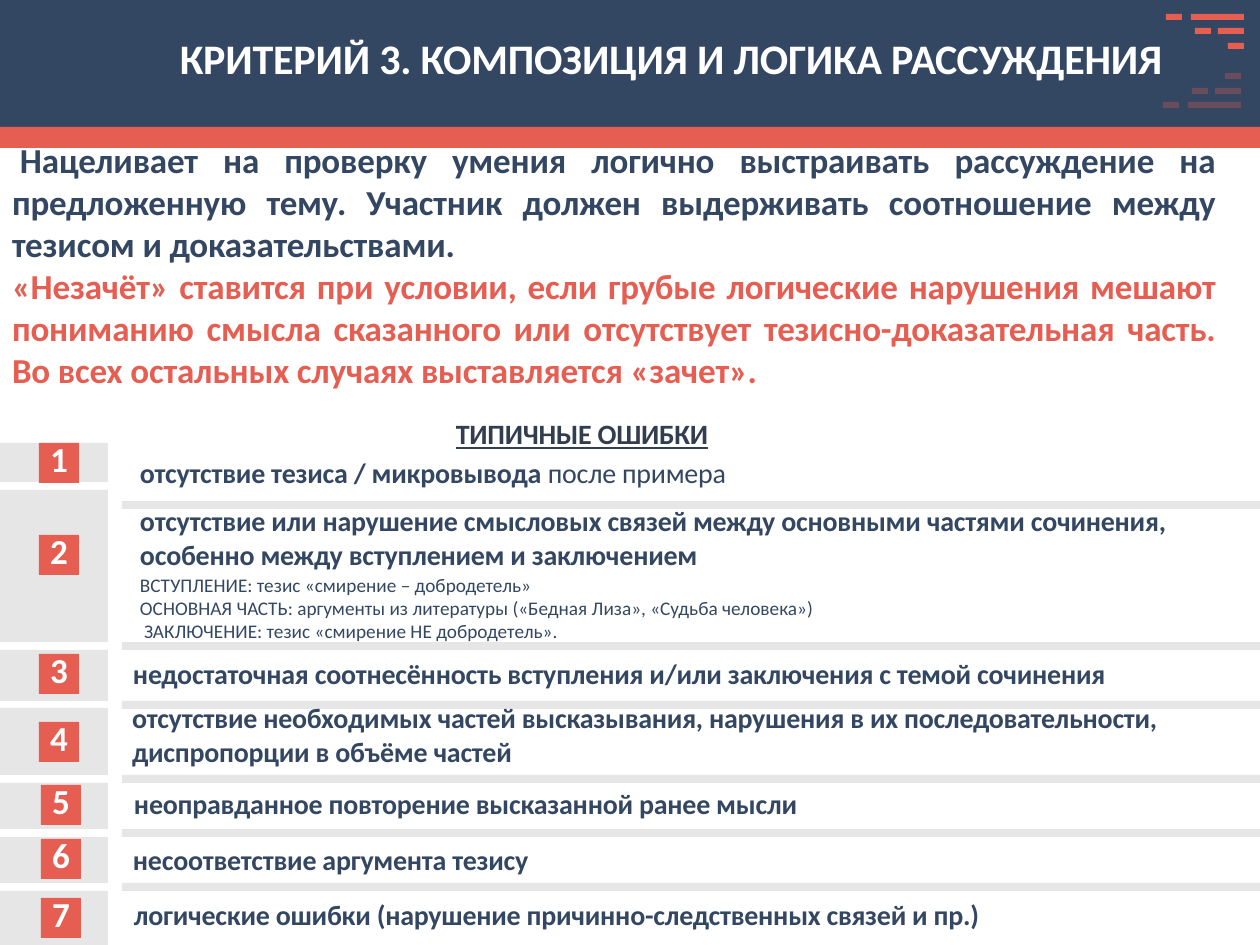
from dataclasses import dataclass

from pptx import Presentation
from pptx import util as u
from pptx.dml.color import RGBColor
from pptx.enum import shapes, text
from pptx.oxml import ns, xmlchemy

PX = 914400 / 126  # EMU in one px


def px(n):
    return u.Emu(round(n * PX))


@dataclass(frozen=True)
class Theme:
    font: str = "Calibri"
    navy: str = "344762"
    dark: str = "333D50"
    coral: str = "E65E52"
    gray: str = "E6E6E6"
    white: str = "FFFFFF"
    title: float = 24
    lead: float = 20
    item: float = 16
    note: float = 11
    tracking: int = -10  # hundredths of a point


def add_run(p, words, *, font, size, color, bold=True, underline=False, tracking=0):
    r = p.add_run()
    r.text = words
    r.font.name, r.font.size = font, u.Pt(size)
    r.font.bold = bold
    if underline:
        r.font.underline = True
    r.font.color.rgb = RGBColor.from_string(color)
    if tracking:
        r._r.get_or_add_rPr().set("spc", str(tracking))


class Deck:
    def __init__(self, theme, width, height):
        self.theme = theme
        self.prs = Presentation()
        self.prs.slide_width, self.prs.slide_height = px(width), px(height)
        self.s = self.prs.slides.add_slide(self.prs.slide_layouts[6])

    def paint(self, sp, color, alpha=None):
        sp.shadow.inherit = False
        sp.fill.solid()
        sp.fill.fore_color.rgb = RGBColor.from_string(color)
        sp.line.fill.background()
        if alpha is not None:
            clr = sp._element.spPr.find(".//" + ns.qn("a:srgbClr"))
            xmlchemy.OxmlElement("a:alpha")
            node = xmlchemy.OxmlElement("a:alpha")
            node.set("val", str(alpha * 1000))
            clr.append(node)

    def rect(self, x, y, w, h, color):
        sp = self.s.shapes.add_shape(
            shapes.MSO_SHAPE.RECTANGLE, px(x), px(y), px(w), px(h))
        self.paint(sp, color)
        return sp

    def dashes(self, boxes, color, alpha=None):
        """One outline made of many (x, y, w, h) bars."""
        x, y = boxes[0][:2]
        fb = self.s.shapes.build_freeform(x, y, scale=PX)
        for x, y, w, h in boxes:
            fb.move_to(x, y)
            fb.add_line_segments([(x + w, y), (x + w, y + h), (x, y + h)], close=True)
        self.paint(fb.convert_to_shape(), color, alpha)

    def frame(self, sp, left=0, top=0, right=0):
        tf = sp.text_frame
        tf.word_wrap = True
        tf.vertical_anchor = text.MSO_ANCHOR.TOP
        tf.margin_left, tf.margin_top = px(left), px(top)
        tf.margin_right, tf.margin_bottom = px(right), 0
        return tf

    def fill_text(self, tf, paragraphs):
        """Each paragraph is a dict: runs, and optional align, before, indent, first, line."""
        for i, para in enumerate(paragraphs):
            p = tf.paragraphs[0] if i == 0 else tf.add_paragraph()
            p.alignment = para.get("align", text.PP_ALIGN.LEFT)
            p.space_before = u.Pt(para.get("before", 0))
            if "line" in para:
                p.line_spacing = u.Pt(para["line"])
            pPr = p._p.get_or_add_pPr()
            pPr.set("marL", str(px(para.get("indent", 0))))
            pPr.set("indent", str(px(para.get("first", 0))))
            for words, style in para["runs"]:
                add_run(p, words, font=self.theme.font, **style)

    def textbox(self, x, y, w, h, paragraphs, **margins):
        sp = self.s.shapes.add_textbox(px(x), px(y), px(w), px(h))
        self.fill_text(self.frame(sp, **margins), paragraphs)

    def badge(self, x, y, number):
        t = self.theme
        sp = self.rect(x, y, 40, 40, t.coral)
        style = dict(size=t.lead, color=t.white)
        self.fill_text(self.frame(sp), [dict(
            runs=[(str(number), style)], align=text.PP_ALIGN.CENTER, line=20.8)])


def main():
    t = Theme()
    d = Deck(t, 1260, 945)
    center, justify = text.PP_ALIGN.CENTER, text.PP_ALIGN.JUSTIFY

    # Text styles
    title = dict(size=t.title, color=t.white, tracking=t.tracking)
    lead = dict(size=t.lead, color=t.navy, tracking=t.tracking)
    warning = dict(lead, color=t.coral)
    item = dict(size=t.item, color=t.navy, tracking=t.tracking)
    heading = dict(item, color=t.dark, underline=True)
    plain = dict(item, bold=False)
    note = dict(plain, size=t.note, tracking=0)

    # Header band with title
    d.rect(0, 0, 1260, 127, t.navy)
    d.textbox(0, 0, 1260, 127, [dict(
        runs=[("КРИТЕРИЙ 3. КОМПОЗИЦИЯ И ЛОГИКА РАССУЖДЕНИЯ", title)],
        align=center)], left=82, top=33)

    # Dash ornaments: the lower one mirrors the upper one
    bars = [(1166, 0, 16), (1191, 0, 53), (1195, 1, 16), (1218, 1, 26), (1228, 2, 16)]
    for rows, shift, alpha in (((14, 28, 43), 0, None), ((102, 88, 73), -3, 30)):
        d.dashes([(x + shift, rows[row], w, 6) for x, row, w in bars], t.coral, alpha)
    d.rect(0, 127, 1260, 21, t.coral)

    # Lead text
    d.textbox(11, 137, 1216, 256, [
        dict(runs=[("Нацеливает на проверку умения логично выстраивать рассуждение на "
                    "предложенную тему. Участник должен выдерживать соотношение между "
                    "тезисом и доказательствами.", lead)], align=justify, first=8),
        dict(runs=[("«Незачёт» ставится при условии, если грубые логические нарушения "
                    "мешают пониманию смысла сказанного или отсутствует "
                    "тезисно-доказательная часть. Во всех остальных случаях "
                    "выставляется «зачет».", warning)], align=justify),
    ], left=1, top=1, right=12)

    # Error rows: band top, bottom; badge x, y; text x, y, width; paragraphs
    def line(words, style=item, **fmt):
        return dict(runs=[(words, style)], **fmt)

    rows = [
        (443, 482, 39, 443, 139, 416, 606, [
            line("ТИПИЧНЫЕ ОШИБКИ", heading, indent=316),
            dict(runs=[("отсутствие тезиса / микровывода ", item),
                       ("после примера", plain)], before=3)]),
        (490, 642, 39, 535, 139, 503, 1042, [
            line("отсутствие или нарушение смысловых связей между основными "
                 "частями сочинения,"),
            line("особенно между вступлением и заключением"),
            line("ВСТУПЛЕНИЕ: тезис «смирение – добродетель»", note, before=1.2),
            line("ОСНОВНАЯ ЧАСТЬ: аргументы из литературы («Бедная Лиза», "
                 "«Судьба человека»)", note),
            line("ЗАКЛЮЧЕНИЕ: тезис «смирение НЕ добродетель».", note, indent=4)]),
        (650, 701, 39, 654, 132, 656, 999, [
            line("недостаточная соотнесённость вступления и/или заключения "
                 "с темой сочинения")]),
        (708, 775, 39, 722, 131, 700, 1042, [
            line("отсутствие необходимых частей высказывания, нарушения в их "
                 "последовательности, диспропорции в объёме частей")]),
        (783, 829, 41, 785, 133, 786, 684, [
            line("неоправданное повторение высказанной ранее мысли")]),
        (837, 883, 41, 839, 132, 842, 413, [line("несоответствие аргумента тезису")]),
        (891, 945, 41, 898, 133, 897, 868, [
            line("логические ошибки (нарушение причинно-следственных связей и пр.)")]),
    ]
    for top, bottom, *_ in rows:
        d.rect(0, top, 108, bottom - top, t.gray)
    # Dividers fill the gaps between bands; the first one sits lower
    for y in [501] + [row[1] for row in rows[1:-1]]:
        d.rect(122, y, 1138, 8, t.gray)
    for number, (_, _, bx, by, x, y, w, paragraphs) in enumerate(rows, 1):
        d.badge(bx, by, number)
        lines = 2 if number == 4 else len(paragraphs)
        d.textbox(x, y, w, 36 * lines, paragraphs, left=1, top=1)

    d.prs.save("out.pptx")


if __name__ == "__main__":
    main()
